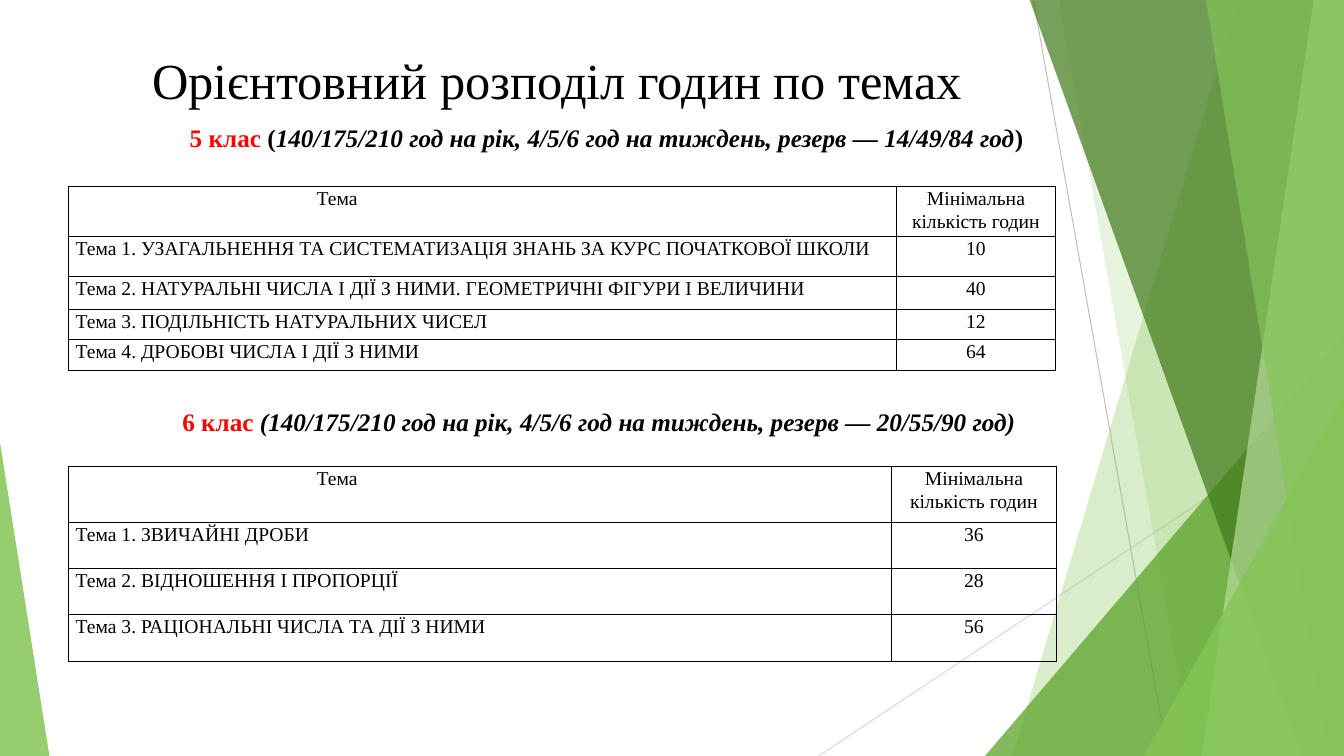
from lxml import etree
from pptx import Presentation
from pptx.dml.color import RGBColor
from pptx.enum import shapes, text
from pptx.oxml.ns import qn
from pptx.util import Inches, Pt

COLORS = {
    "ink": "000000", "grade": "FF0000", "leaf": "84C556", "forest": "54A021",
    "deep": "3F7819", "pale": "B5DC9A", "ray": "BFBFBF", "light ray": "D9D9D9",
}
FONT = "Times New Roman"
WIDTH, HEIGHT = 13.33, 7.5
TOP = -0.01

RAYS = [((10.25, 0), (11.58, HEIGHT), "ray"), ((WIDTH, 4.03), (8.12, HEIGHT), "light ray")]
# Bands reach the right edge: ("band", top x, bottom x, colour, opacity %)
# Triangles stand on the bottom edge: ("triangle", left, top, width, apex, colour, opacity %)
FACETS = [
    ("band", 12.28, 10.04, "leaf", 30),
    ("band", 10.5, 11.83, "leaf", 20),
    ("triangle", 9.77, 3.33, 3.56, 1, "forest", 72),
    ("band", 10.21, 12.91, "deep", 70),
    ("band", 13.03, 11.92, "pale", 70),
    ("band", 11.96, 13.18, "leaf", 65),
    ("triangle", 11.34, 3.93, 1.99, 1, "leaf", 80),
    ("triangle", 0, 4.39, 0.49, 0, "leaf", 85),
]

TITLE = "Орієнтовний розподіл годин по темах"
HEADER = ("Тема", "Мінімальна кількість годин")
GRADES = [
    {
        "heading": [("5 клас ", {"color": "grade"}), ("(", {}),
                    ("140/175/210 год на рік, 4/5/6 год на тиждень, резерв — 14/49/84 год",
                     {"italic": True}), (")", {})],
        "heading_box": (1.41, 1.14, 9.21, 0.43), "align": "CENTER",
        "table_top": 1.85, "columns": (8.21, 1.58), "rows": (0.5, 0.39, 0.33, 0.3, 0.31),
        "topics": [
            ("Тема 1. УЗАГАЛЬНЕННЯ ТА СИСТЕМАТИЗАЦІЯ ЗНАНЬ ЗА КУРС ПОЧАТКОВОЇ ШКОЛИ", "10"),
            ("Тема 2. НАТУРАЛЬНІ ЧИСЛА І ДІЇ З НИМИ. ГЕОМЕТРИЧНІ ФІГУРИ І ВЕЛИЧИНИ", "40"),
            ("Тема 3. ПОДІЛЬНІСТЬ НАТУРАЛЬНИХ ЧИСЕЛ", "12"),
            ("Тема 4. ДРОБОВІ ЧИСЛА І ДІЇ З НИМИ", "64"),
        ],
    },
    {
        "heading": [("6 клас ", {"color": "grade"}),
                    ("(140/175/210 год на рік, 4/5/6 год на тиждень, резерв — 20/55/90 год)",
                     {"italic": True})],
        "heading_box": (1.71, 3.96, 8.84, 0.43), "align": "LEFT",
        "table_top": 4.63, "columns": (8.16, 1.64), "rows": (0.55, 0.46, 0.46, 0.46),
        "topics": [
            ("Тема 1. ЗВИЧАЙНІ ДРОБИ", "36"),
            ("Тема 2. ВІДНОШЕННЯ І ПРОПОРЦІЇ", "28"),
            ("Тема 3. РАЦІОНАЛЬНІ ЧИСЛА ТА ДІЇ З НИМИ", "56"),
        ],
    },
]
TABLE_LEFT = 0.68
CELL_INSET = 0.07
HEADER_INSET = 2.46


def rgb(name):
    return RGBColor.from_string(COLORS[name])


def write(frame, runs, size, align="LEFT", bold=False, spacing=1.07, after=0):
    """Fill the first paragraph with (text, {color, italic}) runs."""
    paragraph = frame.paragraphs[0]
    paragraph.alignment = getattr(text.PP_ALIGN, align)
    paragraph.line_spacing = spacing
    paragraph.space_after = Pt(after)
    for words, look in runs:
        run = paragraph.add_run()
        run.text = words
        run.font.name, run.font.size, run.font.bold = FONT, Pt(size), bold
        run.font.italic = look.get("italic", False)
        run.font.color.rgb = rgb(look.get("color", "ink"))


def add_text(slide, box, runs, size, wrap=True, **layout):
    frame = slide.shapes.add_textbox(*map(Inches, box)).text_frame
    frame.word_wrap = wrap
    frame.auto_size = text.MSO_AUTO_SIZE.SHAPE_TO_FIT_TEXT
    write(frame, runs, size, **layout)


def add_ray(slide, start, end, color):
    ray = slide.shapes.add_connector(
        shapes.MSO_CONNECTOR.STRAIGHT, *map(Inches, start + end))
    ray.line.color.rgb = rgb(color)
    ray.line.width = Pt(0.75)
    etree.SubElement(ray._element.spPr, qn("a:effectLst"))


def add_facet(slide, kind, *geometry):
    *place, color, opacity = geometry
    if kind == "band":
        top_x, bottom_x = place
        corners = [(top_x, TOP), (WIDTH, TOP), (WIDTH, HEIGHT), (bottom_x, HEIGHT)]
        points = [(Inches(x), Inches(y)) for x, y in corners]
        builder = slide.shapes.build_freeform(*points[0], scale=1.0)
        builder.add_line_segments(points[1:], close=True)
        facet = builder.convert_to_shape()
    else:
        left, top, width, apex = place
        facet = slide.shapes.add_shape(
            shapes.MSO_SHAPE.ISOSCELES_TRIANGLE,
            *map(Inches, (left, top, width, HEIGHT - top)))
        facet.adjustments[0] = apex
    facet.shadow.inherit = False
    facet.line.fill.background()
    facet.fill.solid()
    facet.fill.fore_color.rgb = rgb(color)
    tint = facet._element.spPr.find(".//" + qn("a:srgbClr"))
    etree.SubElement(tint, qn("a:alpha"), val=str(opacity * 1000))


def add_borders(cell):
    """Draw the four cell edges; they must precede the fill in the XML."""
    properties = cell._tc.get_or_add_tcPr()
    for position, side in enumerate(("lnL", "lnR", "lnT", "lnB")):
        edge = etree.Element(qn("a:" + side), w=str(Pt(1)))
        fill = etree.SubElement(edge, qn("a:solidFill"))
        etree.SubElement(fill, qn("a:srgbClr"), val=COLORS["ink"])
        properties.insert(position, edge)


def add_hours_table(slide, grade):
    rows, columns = grade["rows"], grade["columns"]
    box = (TABLE_LEFT, grade["table_top"], sum(columns), sum(rows))
    table = slide.shapes.add_table(len(rows), len(columns), *map(Inches, box)).table
    table.first_row = table.horz_banding = False
    for column, width in zip(table.columns, columns):
        column.width = Inches(width)
    for r, (height, entry) in enumerate(zip(rows, [HEADER] + grade["topics"])):
        table.rows[r].height = Inches(height)
        for c, words in enumerate(entry):
            cell = table.cell(r, c)
            cell.margin_left = Inches(HEADER_INSET if (r, c) == (0, 0) else CELL_INSET)
            cell.margin_right = Inches(CELL_INSET)
            cell.margin_top = cell.margin_bottom = 0
            cell.fill.background()
            add_borders(cell)
            write(cell.text_frame, [(words, {})], 14, align="CENTER" if c else "LEFT")


def main():
    deck = Presentation()
    deck.slide_width, deck.slide_height = Inches(WIDTH), Inches(HEIGHT)
    slide = deck.slides.add_slide(deck.slide_layouts[6])
    for ray in RAYS:
        add_ray(slide, *ray)
    for facet in FACETS:
        add_facet(slide, *facet)
    add_text(slide, (1.41, 0.44, 8.32, 0.71), [(TITLE, {})], 36, wrap=False, spacing=1.0)
    for grade in GRADES:
        add_text(slide, grade["heading_box"], grade["heading"], 18,
                 align=grade["align"], bold=True, after=8)
        add_hours_table(slide, grade)
    deck.save("out.pptx")


if __name__ == "__main__":
    main()
